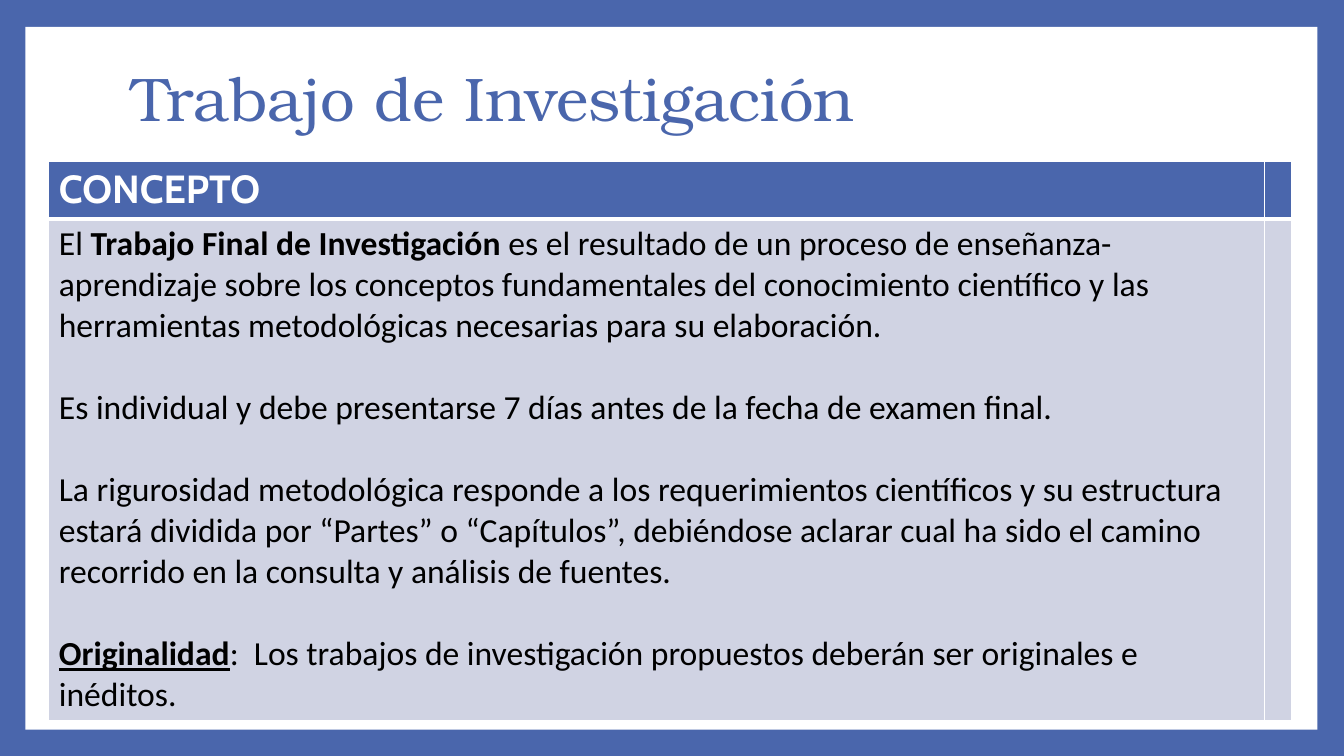
from dataclasses import dataclass

from lxml.etree import fromstring
from pptx import Presentation
from pptx.dml.color import RGBColor
from pptx.enum.shapes import MSO_SHAPE
from pptx.enum.text import MSO_ANCHOR, MSO_AUTO_SIZE, PP_ALIGN
from pptx.oxml.ns import nsdecls
from pptx.util import Cm, Pt

HUES = {"blue": "4A66AC", "pale": "D0D3E3", "white": "FFFFFF", "black": "000000"}
GAP = 29.3  # one line of body text, in points


@dataclass
class Style:
    font: str
    size: int
    hue: str


@dataclass
class Part:
    text: str
    bold: bool = False
    line: bool = False


@dataclass
class Row:
    height: float
    fill: str
    base: int  # width of the bottom border, in points
    style: Style
    paras: list[list[Part]]


HEAD = Style("TeX Gyre Bonum", 44, "blue")
ROWS = [
    Row(1.42, "blue", 3, Style("Cabin", 28, "white"), [[Part("CONCEPTO", True)]]),
    Row(12.64, "pale", 1, Style("Calibri", 24, "black"), [
        [Part("El "), Part("Trabajo Final de Investigación", True),
         Part(" es el resultado de un proceso de enseñanza-aprendizaje sobre los "
              "conceptos fundamentales del conocimiento científico y las "
              "herramientas metodológicas necesarias para su elaboración.")],
        [Part("Es individual y debe presentarse 7 días antes de la fecha de "
              "examen final.")],
        [Part("La rigurosidad metodológica responde a los requerimientos "
              "científicos y su estructura estará dividida por “Partes” o "
              "“Capítulos”, debiéndose aclarar cual ha sido el camino recorrido "
              "en la consulta y análisis de fuentes.")],
        [Part("Originalidad", True, True),
         Part(":  Los trabajos de investigación propuestos deberán ser "
              "originales e inéditos.")],
    ]),
]
COLS = [30.64, 0.67]


def tint(name: str) -> RGBColor:
    return RGBColor.from_string(HUES[name])


def write(para, parts: list[Part], style: Style) -> None:
    for part in parts:
        run = para.add_run()
        run.text = part.text
        font = run.font
        font.name, font.size = style.font, Pt(style.size)
        font.bold, font.underline = part.bold, part.line
        font.color.rgb = tint(style.hue)


def edge(cell, base: int) -> None:
    props = cell._tc.get_or_add_tcPr()
    for spot, side in enumerate("LRTB"):
        wide = Pt(base if side == "B" else 1)
        props.insert(spot, fromstring(
            f'<a:ln{side} {nsdecls("a")} w="{wide}"><a:solidFill>'
            f'<a:srgbClr val="{HUES["white"]}"/></a:solidFill></a:ln{side}>'))


def fill(cell, row: Row) -> None:
    cell.fill.solid()
    cell.fill.fore_color.rgb = tint(row.fill)
    edge(cell, row.base)


def main() -> None:
    deck = Presentation()
    deck.slide_width, deck.slide_height = Cm(33.87), Cm(19.05)
    slide = deck.slides.add_slide(deck.slide_layouts[5])

    # Blue frame around a white panel
    back = slide.background.fill
    back.solid()
    back.fore_color.rgb = tint("blue")
    panel = slide.shapes.add_shape(
        MSO_SHAPE.RECTANGLE, Cm(0.64), Cm(0.68), Cm(32.56), Cm(17.71))
    panel.shadow.inherit = False
    panel.fill.solid()
    panel.fill.fore_color.rgb = tint("white")
    panel.line.fill.background()

    # Title, brought in front of the panel
    title = slide.shapes.title
    panel._element.addnext(title._element)
    title.left, title.top = Cm(3.05), Cm(0.68)
    title.width, title.height = Cm(27.43), Cm(3.76)
    frame = title.text_frame
    frame.auto_size = MSO_AUTO_SIZE.NONE
    frame.vertical_anchor = MSO_ANCHOR.MIDDLE
    para = frame.paragraphs[0]
    para.alignment, para.line_spacing = PP_ALIGN.LEFT, 0.9
    write(para, [Part("Trabajo de Investigación")], HEAD)

    # Concept table
    table = slide.shapes.add_table(
        len(ROWS), len(COLS), Cm(1.23), Cm(4.06),
        Cm(sum(COLS)), Cm(sum(row.height for row in ROWS))).table
    for col, wide in zip(table.columns, COLS):
        col.width = Cm(wide)
    for line, row in zip(table.rows, ROWS):
        line.height = Cm(row.height)
        for cell in line.cells:
            fill(cell, row)
        body = line.cells[0].text_frame
        for spot, parts in enumerate(row.paras):
            para = body.add_paragraph() if spot else body.paragraphs[0]
            para.space_before = Pt(GAP if spot else 0)
            write(para, parts, row.style)

    deck.save("out.pptx")


if __name__ == "__main__":
    main()
